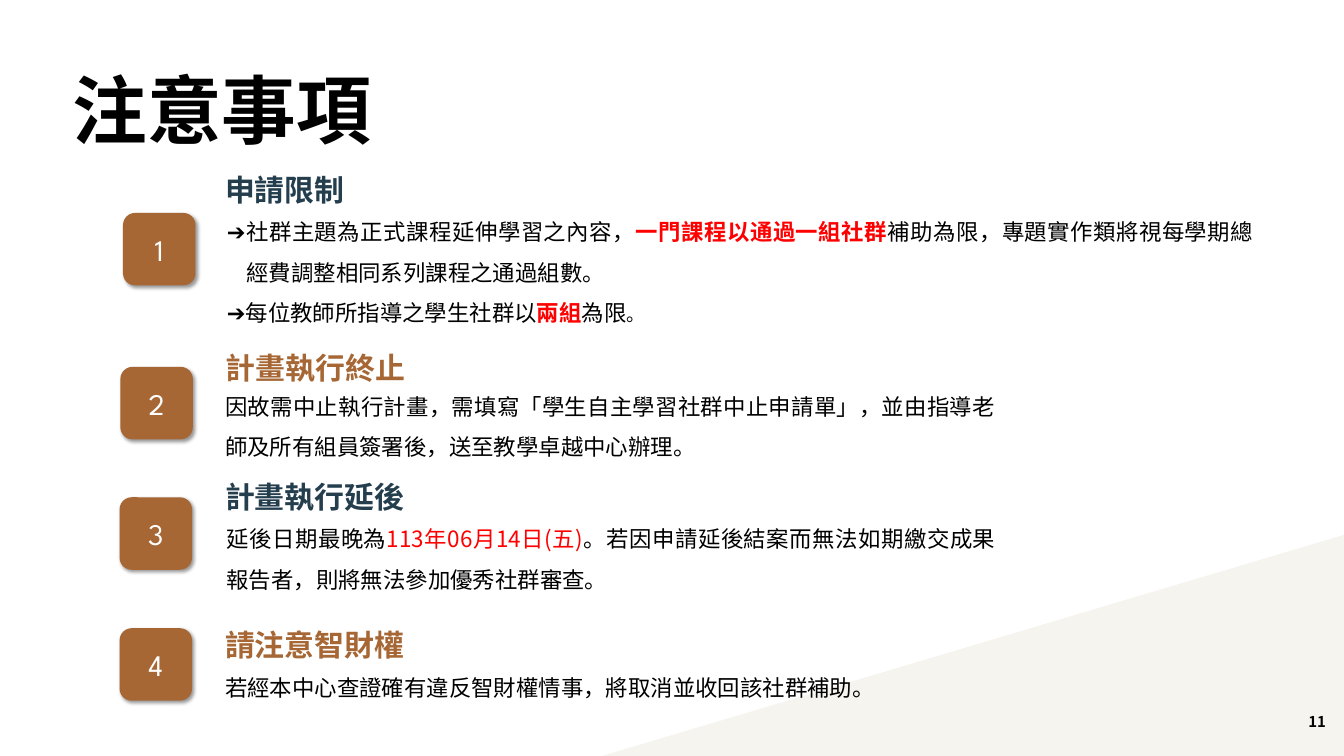
from lxml import etree
from pptx import Presentation
from pptx import util as u
from pptx.dml import color
from pptx.enum import shapes, text
from pptx.oxml import ns

COLORS = {
    "ink": "000000",
    "navy": "243E4D",
    "brown": "A66735",
    "red": "FF0000",
    "white": "FFFFFF",
    "cream": "F6F4EF",
}
CJK = "Noto Sans CJK SC"
LATIN = "League Spartan"
BADGE = 2.74
HEADING_HEIGHT = 1.63

SECTIONS = [
    {
        "badge": (4.65, 8.05),
        "heading": ("申請限制", "navy", (8.26, 6.38, 7.49)),
        "box": (8.33, 7.62, 39.29, 4.88),
        "spacing": 1.5,
        "hanging": 0.74,
        "body": [
            [("➔社群主題為正式課程延伸學習之內容，", {}),
             ("一門課程以通過一組社群", {"fill": "red", "bold": True}),
             ("補助為限，專題實作類將視每學期總經費調整相同系列課程之通過組數。", {})],
            [("➔每位教師所指導之學生社群以", {}),
             ("兩組", {"fill": "red", "bold": True}),
             ("為限", {}),
             ("。", {"size": 20})],
        ],
    },
    {
        "badge": (4.55, 13.87),
        "heading": ("計畫執行終止", "brown", (8.28, 13.11, 8.86)),
        "box": (8.26, 14.22, 29.62, 3.15),
        "spacing": 1.5,
        "body": [[("因故需中止執行計畫，需填寫「學生自主學習社群中止申請單」，"
                   "並由指導老師及所有組員簽署後，送至教學卓越中心辦理。", {})]],
    },
    {
        "badge": (4.52, 18.8),
        "heading": ("計畫執行延後", "navy", (8.26, 17.98, 8.05)),
        "box": (8.31, 19.23, 29.57, 3.15),
        "spacing": 1.5,
        "body": [[("延後日期最晚為", {}),
                  ("113年06月14日(五)", {"fill": "red"}),
                  ("。若因申請延後結案而無法如期繳交成果報告者，"
                   "則將無法參加優秀社群審查。", {})]],
    },
    {
        "badge": (4.52, 23.75),
        "heading": ("請注意智財權", "brown", (8.26, 23.57, 8.05)),
        "box": (8.26, 25.37, 27.2, 1.27),
        "spacing": 1,
        "body": [[("若經本中心查證確有違反智財權情事，將取消並收回該社群補助。", {})]],
    },
]


def rgb(name):
    return color.RGBColor.from_string(COLORS[name])


def add_run(p, words, size=24, fill="ink", bold=False, font=CJK):
    r = p.add_run()
    r.text = words
    r.font.size = u.Pt(size)
    r.font.bold = bold
    r.font.color.rgb = rgb(fill)
    r.font.name = font
    etree.SubElement(r.font._element, ns.qn("a:ea"), typeface=font)


def add_box(s, left, top, width, height):
    sp = s.shapes.add_textbox(u.Cm(left), u.Cm(top), u.Cm(width), u.Cm(height))
    tf = sp.text_frame
    tf.word_wrap = True
    return tf


def add_title(s, words):
    sp = s.shapes.title
    sp.left, sp.top, sp.width, sp.height = map(u.Cm, (2.74, 2.11, 20.24, 3.43))
    tf = sp.text_frame
    tf.margin_left = tf.margin_right = tf.margin_top = tf.margin_bottom = 0
    tf.auto_size = text.MSO_AUTO_SIZE.SHAPE_TO_FIT_TEXT
    tf.vertical_anchor = text.MSO_ANCHOR.TOP
    p = tf.paragraphs[0]
    p.alignment = text.PP_ALIGN.LEFT
    p.line_spacing = u.Pt(104.4)
    add_run(p, words, size=80, bold=True)


def add_corner(s):
    points = [(u.Cm(x), u.Cm(y))
              for x, y in ((22.76, 28.58), (50.8, 20.22), (50.8, 28.58))]
    builder = s.shapes.build_freeform(*points[0])
    builder.add_line_segments(points[1:], close=True)
    sp = builder.convert_to_shape()
    sp.shadow.inherit = False
    sp.fill.solid()
    sp.fill.fore_color.rgb = rgb("cream")
    sp.line.fill.background()


def add_drop_shadow(sp):
    sp.shadow.inherit = False
    effects = sp._element.spPr.find(ns.qn("a:effectLst"))
    shadow = etree.SubElement(
        effects, ns.qn("a:outerShdw"), blurRad=str(u.Pt(4)), dist=str(u.Pt(3)),
        dir="2700000", algn="tl", rotWithShape="0")
    tint = etree.SubElement(shadow, ns.qn("a:srgbClr"), val=COLORS["ink"])
    etree.SubElement(tint, ns.qn("a:alpha"), val="40000")


def add_badge(s, number, left, top):
    sp = s.shapes.add_shape(shapes.MSO_SHAPE.ROUNDED_RECTANGLE,
                            u.Cm(left), u.Cm(top), u.Cm(BADGE), u.Cm(BADGE))
    sp.fill.solid()
    sp.fill.fore_color.rgb = rgb("brown")
    sp.line.fill.background()
    add_drop_shadow(sp)
    tf = sp.text_frame
    tf.vertical_anchor = text.MSO_ANCHOR.MIDDLE
    p = tf.paragraphs[0]
    p.alignment = text.PP_ALIGN.CENTER
    add_run(p, str(number), size=32, fill="white", font=LATIN)


def add_heading(s, words, fill, place):
    tf = add_box(s, *place, HEADING_HEIGHT)
    tf.auto_size = text.MSO_AUTO_SIZE.SHAPE_TO_FIT_TEXT
    add_run(tf.paragraphs[0], words, size=32, fill=fill, bold=True)


def add_body(s, paragraphs, box, spacing, hanging=0):
    tf = add_box(s, *box)
    tf.auto_size = text.MSO_AUTO_SIZE.SHAPE_TO_FIT_TEXT
    for i, runs in enumerate(paragraphs):
        p = tf.add_paragraph() if i else tf.paragraphs[0]
        p.alignment = text.PP_ALIGN.JUSTIFY
        p.line_spacing = float(spacing)
        if hanging and i == 0:
            pPr = p._p.get_or_add_pPr()
            pPr.set("marL", str(u.Cm(hanging)))
            pPr.set("indent", str(-u.Cm(hanging)))
        for words, style in runs:
            add_run(p, words, **style)


def add_page_number(s, number):
    tf = add_box(s, 44.45, 26.77, 5.92, 1.02)
    tf.vertical_anchor = text.MSO_ANCHOR.MIDDLE
    p = tf.paragraphs[0]
    p.alignment = text.PP_ALIGN.RIGHT
    add_run(p, str(number), size=16, bold=True)


def main():
    prs = Presentation()
    prs.slide_width, prs.slide_height = u.Cm(50.8), u.Cm(28.58)
    s = prs.slides.add_slide(prs.slide_layouts[5])
    add_corner(s)
    add_title(s, "注意事項")
    for number, section in enumerate(SECTIONS, 1):
        add_heading(s, *section["heading"])
        add_body(s, section["body"], section["box"], section["spacing"],
                 section.get("hanging", 0))
        add_badge(s, number, *section["badge"])
    add_page_number(s, 11)
    prs.save("out.pptx")


if __name__ == "__main__":
    main()
